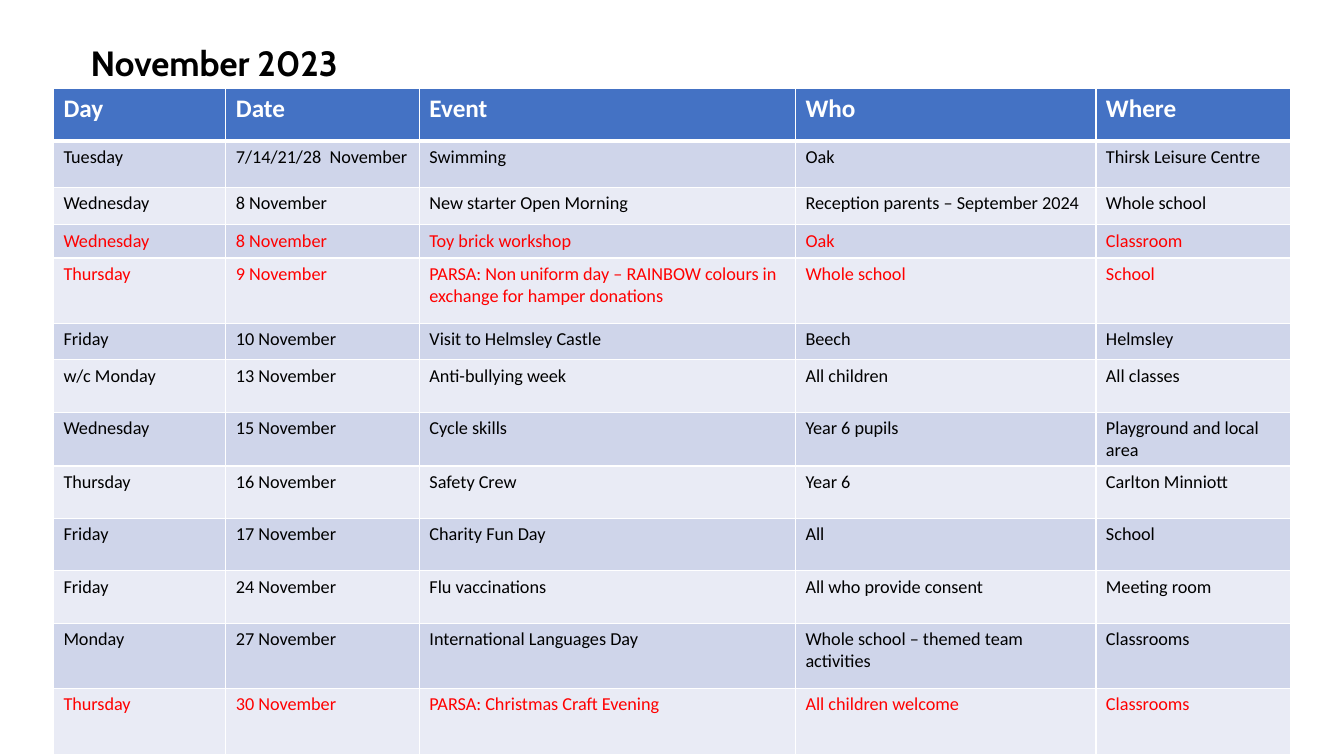
from lxml.etree import SubElement
from pptx import Presentation
from pptx.dml.color import RGBColor
from pptx.enum.text import MSO_ANCHOR, MSO_AUTO_SIZE, PP_ALIGN
from pptx.oxml.ns import qn
from pptx.util import Pt

EMU_PER_PX = 9144  # 100 px to the inch

COLORS = {
    "header": "4472C4",
    "band_dark": "CFD5EA",
    "band_light": "E9EBF5",
    "white": "FFFFFF",
    "black": "000000",
    "red": "FF0000",
}

COLUMN_WIDTHS = [171, 192, 373, 298, 193]
ROW_HEIGHTS = [52, 46, 37, 33, 65, 36, 52, 52, 52, 52, 52, 65, 65]
HEADINGS = ("Day", "Date", "Event", "Who", "Where")
EVENTS = [
    ("Tuesday", "7/14/21/28  November", "Swimming", "Oak", "Thirsk Leisure Centre"),
    ("Wednesday", "8 November", "New starter Open Morning",
     "Reception parents – September 2024", "Whole school"),
    ("Wednesday", "8 November", "Toy brick workshop", "Oak", "Classroom"),
    ("Thursday", "9 November",
     "PARSA: Non uniform day – RAINBOW colours in exchange for hamper donations",
     "Whole school", "School"),
    ("Friday", "10 November", "Visit to Helmsley Castle", "Beech", "Helmsley"),
    ("w/c Monday", "13 November", "Anti-bullying week", "All children", "All classes"),
    ("Wednesday", "15 November", "Cycle skills", "Year 6 pupils",
     "Playground and local area"),
    ("Thursday", "16 November", "Safety Crew", "Year 6", "Carlton Minniott"),
    ("Friday", "17 November", "Charity Fun Day", "All", "School"),
    ("Friday", "24 November", "Flu vaccinations", "All who provide consent",
     "Meeting room"),
    ("Monday", "27 November", "International Languages Day",
     "Whole school – themed team activities", "Classrooms"),
    ("Thursday", "30 November", "PARSA: Christmas Craft Evening",
     "All children welcome", "Classrooms"),
]
HIGHLIGHTED_ROWS = {3, 4, 12}


def px(length):
    return length * EMU_PER_PX


def rgb(name):
    return RGBColor.from_string(COLORS[name])


class CalendarSlide:
    """Holds the slide and its text style."""

    def __init__(self, presentation):
        self.slide = presentation.slides.add_slide(presentation.slide_layouts[5])
        self.title_font = "Cabin"
        self.table_font = "Calibri"

    def add_run(self, paragraph, text, font_name, size, color, bold=False):
        run = paragraph.add_run()
        run.text = text
        run.font.name = font_name
        run.font.size = Pt(size)
        run.font.bold = bold
        run.font.color.rgb = rgb(color)

    def add_title(self, text, left, top, width, height):
        title = self.slide.shapes.title
        title.left, title.top = px(left), px(top)
        title.width, title.height = px(width), px(height)
        frame = title.text_frame
        frame.word_wrap = True
        frame.auto_size = MSO_AUTO_SIZE.SHAPE_TO_FIT_TEXT
        frame.vertical_anchor = MSO_ANCHOR.TOP
        paragraph = frame.paragraphs[0]
        paragraph.alignment = PP_ALIGN.LEFT
        self.add_run(paragraph, text, self.title_font, 25, "black", bold=True)

    def add_borders(self, cell, top, bottom):
        properties = cell._tc.get_or_add_tcPr()
        for side, width in (("L", 1), ("R", 1), ("T", top), ("B", bottom)):
            line = SubElement(properties, qn(f"a:ln{side}"), w=str(Pt(width)))
            fill = SubElement(line, qn("a:solidFill"))
            SubElement(fill, qn("a:srgbClr"), val=COLORS["white"])

    def add_table(self, rows, left, top):
        frame = self.slide.shapes.add_table(
            len(rows), len(COLUMN_WIDTHS), px(left), px(top),
            px(sum(COLUMN_WIDTHS)), px(sum(ROW_HEIGHTS)))
        table = frame.table
        for column, width in zip(table.columns, COLUMN_WIDTHS):
            column.width = px(width)
        for index, (row, height) in enumerate(zip(table.rows, ROW_HEIGHTS)):
            row.height = px(height)
            is_header = index == 0
            if is_header:
                fill, color, size = "header", "white", 18
            else:
                fill = "band_dark" if index % 2 else "band_light"
                color = "red" if index in HIGHLIGHTED_ROWS else "black"
                size = 13
            for cell, text in zip(row.cells, rows[index]):
                self.add_borders(cell, top=3 if index == 1 else 1,
                                 bottom=3 if is_header else 1)
                cell.fill.solid()
                cell.fill.fore_color.rgb = rgb(fill)
                self.add_run(cell.text_frame.paragraphs[0], text,
                             self.table_font, size, color, bold=is_header)


def main():
    presentation = Presentation()
    presentation.slide_width = px(1333)
    presentation.slide_height = px(750)
    calendar = CalendarSlide(presentation)

    # Month heading
    calendar.add_title("November 2023", 80, 36, 445, 52)

    # Events table
    calendar.add_table([HEADINGS, *EVENTS], 53, 88)

    presentation.save("out.pptx")


if __name__ == "__main__":
    main()
